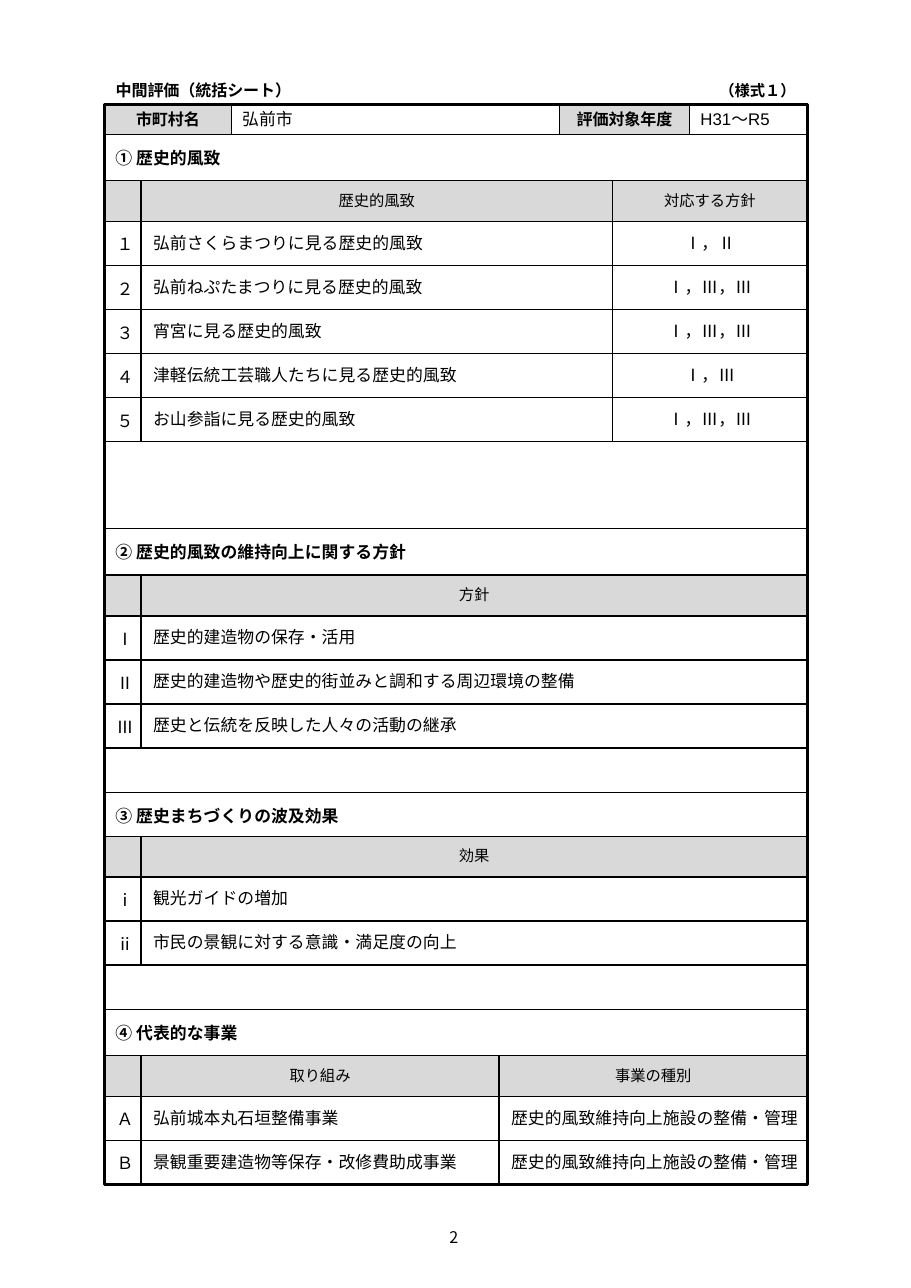
from pptx import Presentation
from pptx.dml.color import RGBColor
from pptx.enum.shapes import MSO_SHAPE
from pptx.enum.text import MSO_ANCHOR, MSO_AUTO_SIZE, PP_ALIGN
from pptx.oxml import parse_xml
from pptx.oxml.ns import nsdecls
from pptx.util import Inches, Pt

BLACK = RGBColor(0x00, 0x00, 0x00)
GREY = RGBColor(0xD9, 0xD9, 0xD9)
GOTHIC = "Noto Sans CJK JP"
LEFT, WIDTH = 0.95, 6.38
HEADER_HEIGHT, ROW_HEIGHT = 0.37, 0.4
TYPE_OF_WORK = "歴史的風致維持向上施設の整備・管理"

# Section: heading, top, height, table top, column widths, header, rows
SECTIONS = [
    ("① 歴史的風致", 1.22, 3.58, 1.64, [0.33, 4.28, 1.77],
     ["", "歴史的風致", "対応する方針"],
     [["１", "弘前さくらまつりに見る歴史的風致", "Ⅰ，Ⅱ"],
      ["２", "弘前ねぷたまつりに見る歴史的風致", "Ⅰ，Ⅲ，Ⅲ"],
      ["３", "宵宮に見る歴史的風致", "Ⅰ，Ⅲ，Ⅲ"],
      ["４", "津軽伝統工芸職人たちに見る歴史的風致", "Ⅰ，Ⅲ"],
      ["５", "お山参詣に見る歴史的風致", "Ⅰ，Ⅲ，Ⅲ"]]),
    ("② 歴史的風致の維持向上に関する方針", 4.8, 2.39, 5.22, [0.33, 6.05],
     ["", "方針"],
     [["Ⅰ", "歴史的建造物の保存・活用"],
      ["Ⅱ", "歴史的建造物や歴史的街並みと調和する周辺環境の整備"],
      ["Ⅲ", "歴史と伝統を反映した人々の活動の継承"]]),
    ("③ 歴史まちづくりの波及効果", 7.19, 1.97, 7.59, [0.33, 6.05],
     ["", "効果"],
     [["ⅰ", "観光ガイドの増加"],
      ["ⅱ", "市民の景観に対する意識・満足度の向上"]]),
    ("④ 代表的な事業", 9.16, 1.59, 9.58, [0.33, 3.25, 2.8],
     ["", "取り組み", "事業の種別"],
     [["Ａ", "弘前城本丸石垣整備事業", TYPE_OF_WORK],
      ["Ｂ", "景観重要建造物等保存・改修費助成事業", TYPE_OF_WORK]]),
]


def write(frame, text, size=11, font=GOTHIC, bold=False, align=PP_ALIGN.LEFT):
    paragraph = frame.paragraphs[0]
    paragraph.alignment = align
    if not text:
        paragraph._p.get_or_add_endParaRPr().set("sz", str(int(size * 100)))
        return
    run = paragraph.add_run()
    run.text = text
    run.font.size = Pt(size)
    run.font.bold = bold
    run.font.color.rgb = BLACK
    run.font.name = font
    # East Asian glyphs take their own typeface
    run.font._element.find("{*}latin").addnext(
        parse_xml(f'<a:ea {nsdecls("a")} typeface="{font}"/>'))


def add_box(slide, left, top, width, height, fill=None, line=0.5):
    box = slide.shapes.add_shape(MSO_SHAPE.RECTANGLE, Inches(left), Inches(top),
                                 Inches(width), Inches(height))
    box.shadow.inherit = False
    if fill is None:
        box.fill.background()
    else:
        box.fill.solid()
        box.fill.fore_color.rgb = fill
    box.line.color.rgb = BLACK
    box.line.width = Pt(line)
    return box


def add_label(slide, left, top, width, height, text, **style):
    label = slide.shapes.add_textbox(Inches(left), Inches(top),
                                     Inches(width), Inches(height))
    label.text_frame.word_wrap = True
    label.text_frame.vertical_anchor = MSO_ANCHOR.MIDDLE
    write(label.text_frame, text, **style)


def set_title(slide, text):
    title = slide.shapes.title
    title.left, title.top = Inches(LEFT), Inches(0.69)
    title.width, title.height = Inches(5.06), Inches(0.26)
    title.text_frame.auto_size = MSO_AUTO_SIZE.NONE
    title.text_frame.vertical_anchor = MSO_ANCHOR.MIDDLE
    write(title.text_frame, text, size=10.5, bold=True)


def add_summary_row(slide):
    label = dict(size=10.5, bold=True, align=PP_ALIGN.CENTER)
    value = dict(size=11, font="Arial")
    left = LEFT
    for text, width, fill, style in [
            ("市町村名", 1.15, GREY, label), ("弘前市", 2.98, None, value),
            ("評価対象年度", 1.18, GREY, label), ("H31～R5", 1.07, None, value)]:
        box = add_box(slide, left, 0.94, width, 0.28, fill)
        box.text_frame.vertical_anchor = MSO_ANCHOR.MIDDLE
        write(box.text_frame, text, **style)
        left += width


def set_borders(cell):
    properties = cell._tc.get_or_add_tcPr()
    for position, side in enumerate(("lnL", "lnR", "lnT", "lnB")):
        properties.insert(position, parse_xml(
            f'<a:{side} {nsdecls("a")} w="12700"><a:solidFill>'
            f'<a:srgbClr val="{BLACK}"/></a:solidFill></a:{side}>'))


def format_cell(cell, text, is_header, column):
    cell.vertical_anchor = MSO_ANCHOR.MIDDLE
    cell.margin_left = Inches(0.11)
    # The type of work needs nearly the full column to stay on one line
    cell.margin_right = Inches(0.04 if text == TYPE_OF_WORK else 0.11)
    cell.margin_top = cell.margin_bottom = Inches(0.05)
    if is_header:
        cell.fill.solid()
        cell.fill.fore_color.rgb = GREY
    else:
        cell.fill.background()
    set_borders(cell)
    centred = is_header or (column == 2 and text != TYPE_OF_WORK)
    write(cell.text_frame, text, size=10 if is_header else 11,
          font=GOTHIC if column == 0 else "Calibri",
          align=PP_ALIGN.CENTER if centred else PP_ALIGN.LEFT)


def add_grid(slide, top, widths, header, rows):
    lines = [header] + rows
    height = HEADER_HEIGHT + ROW_HEIGHT * len(rows)
    grid = slide.shapes.add_table(len(lines), len(widths), Inches(LEFT), Inches(top),
                                  Inches(WIDTH), Inches(height)).table
    grid.horz_banding = False
    for column, width in zip(grid.columns, widths):
        column.width = Inches(width)
    for r, line in enumerate(lines):
        grid.rows[r].height = Inches(ROW_HEIGHT if r else HEADER_HEIGHT)
        for c, text in enumerate(line):
            format_cell(grid.cell(r, c), text, r == 0, c)


def add_section(slide, heading, top, height, grid_top, widths, header, rows):
    frame = add_box(slide, LEFT, top, WIDTH, height).text_frame
    frame.vertical_anchor = MSO_ANCHOR.TOP
    frame.margin_top = Inches(0.12)
    write(frame, heading, bold=True)
    add_grid(slide, grid_top, widths, header, rows)


def main():
    prs = Presentation()
    prs.slide_width, prs.slide_height = Inches(8.27), Inches(11.69)
    slide = prs.slides.add_slide(prs.slide_layouts[5])

    # Title line and form number
    set_title(slide, "中間評価（統括シート）")
    add_label(slide, 6, 0.69, 1.32, 0.26, "（様式１）", size=10, bold=True,
              align=PP_ALIGN.RIGHT)

    # Municipality and period, then the four sections
    add_summary_row(slide)
    for section in SECTIONS:
        add_section(slide, *section)

    # Outer frame and page number
    add_box(slide, LEFT, 0.95, WIDTH, 9.8, line=2.25)
    add_label(slide, 3.79, 11.04, 0.66, 0.38, "2", size=10.5, align=PP_ALIGN.CENTER)

    prs.save("out.pptx")


if __name__ == "__main__":
    main()
